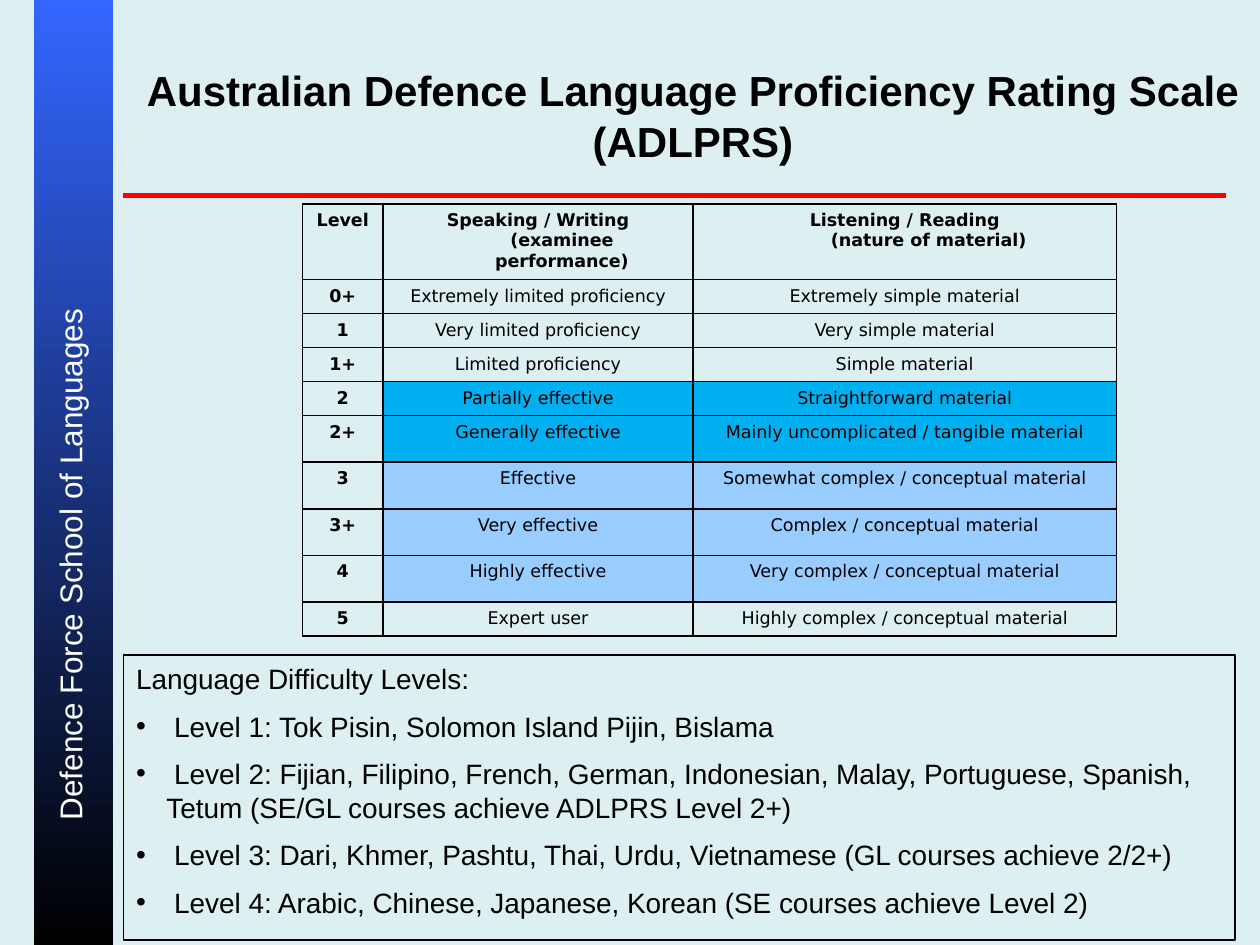
from copy import deepcopy
from dataclasses import dataclass

from lxml import etree
from pptx import Presentation
from pptx import util as u
from pptx.dml.color import RGBColor
from pptx.enum import shapes, text
from pptx.oxml.ns import qn

COLS, ROWS = 100, 75
BLACK, SKY, PALE = "000000", "00B0F0", "99CCFF"
CENTER, LEFT = text.PP_ALIGN.CENTER, text.PP_ALIGN.LEFT

prs = Presentation()
prs.slide_width, prs.slide_height = u.Inches(10), u.Inches(7.5)


def col(n: float) -> int:
    return round(prs.slide_width * n / COLS)


def row(n: float) -> int:
    return round(prs.slide_height * n / ROWS)


def rgb(value: str) -> RGBColor:
    return RGBColor.from_string(value)


@dataclass
class Box:
    x: float
    y: float
    w: float
    h: float

    def emu(self) -> tuple:
        return col(self.x), row(self.y), col(self.w), row(self.h)


@dataclass
class Level:
    name: str
    speaking: str
    listening: str
    height: float = 2.7
    fill: str = ""


@dataclass
class Style:
    size: float
    font: str = "Arial"
    color: str = BLACK
    bold: bool = False
    align: int = CENTER
    margin: float = 0
    hang: float = 0
    bullet: str = ""
    before: float = 0


def place(sp, box: Box) -> None:
    for name, value in zip(("left", "top", "width", "height"), box.emu()):
        setattr(sp, name, value)


def write(p, words: str, st: Style) -> None:
    p.text = words
    ppr = p._p.get_or_add_pPr()
    ppr.set("marL", str(col(st.margin)))
    ppr.set("indent", str(-col(st.hang)))
    if st.bullet:
        etree.SubElement(ppr, qn("a:buChar")).set("char", st.bullet)
    else:
        etree.SubElement(ppr, qn("a:buNone"))
    for name, value in {"alignment": st.align, "space_before": u.Pt(st.before)}.items():
        setattr(p, name, value)
    for r in p.runs:
        values = {"size": u.Pt(st.size), "name": st.font, "bold": st.bold}
        for name, value in values.items():
            setattr(r.font, name, value)
        r.font.color.rgb = rgb(st.color)
    for br in p._p.findall(qn("a:br")):
        br.append(deepcopy(p.runs[0]._r.rPr))


def set_frame(tf, anchor) -> None:
    values = {"word_wrap": True, "auto_size": text.MSO_AUTO_SIZE.NONE,
              "vertical_anchor": anchor}
    for name, value in values.items():
        setattr(tf, name, value)


def border(cell, color: str, width: float) -> None:
    tcpr = cell._tc.get_or_add_tcPr()
    for i, side in enumerate(("lnL", "lnR", "lnT", "lnB")):
        ln = etree.Element(qn(f"a:{side}"), w=str(u.Pt(width)))
        fill = etree.SubElement(ln, qn("a:solidFill"))
        etree.SubElement(fill, qn("a:srgbClr")).set("val", color)
        tcpr.insert(i, ln)


def draw_band(s, box: Box) -> None:
    sp = s.shapes.add_shape(shapes.MSO_SHAPE.RECTANGLE, *box.emu())
    sp.shadow.inherit = False
    sp.line.fill.background()
    sp.fill.gradient()
    sp.fill.gradient_angle = 270
    for stop, color in zip(sp.fill.gradient_stops, ("3366FF", BLACK)):
        stop.color.rgb = rgb(color)


def draw_rule(s, x1: float, x2: float, y: float) -> None:
    cn = s.shapes.add_connector(shapes.MSO_CONNECTOR.STRAIGHT,
                                col(x1), row(y), col(x2), row(y))
    cn.line.color.rgb = rgb("FF0000")
    cn.line.width = u.Pt(3)
    etree.SubElement(cn._element.spPr, qn("a:effectLst"))


def draw_side_label(s, words: str, box: Box) -> None:
    sp = s.shapes.add_textbox(*box.emu())
    sp.rotation = 270
    set_frame(sp.text_frame, text.MSO_ANCHOR.TOP)
    write(sp.text_frame.paragraphs[0], words, Style(18, color="FFFFFF"))


def draw_table(s, levels: list, widths: tuple, x: float, y: float) -> None:
    box = Box(x, y, sum(widths), sum(lv.height for lv in levels))
    tbl = s.shapes.add_table(len(levels), len(widths), *box.emu()).table
    tbl.first_row = tbl.horz_banding = False
    for column, width in zip(tbl.columns, widths):
        column.width = col(width)
    for i, lv in enumerate(levels):
        tbl.rows[i].height = row(lv.height)
        for j, words in enumerate((lv.name, lv.speaking, lv.listening)):
            cell = tbl.cell(i, j)
            if lv.fill and j:
                cell.fill.solid()
                cell.fill.fore_color.rgb = rgb(lv.fill)
            else:
                cell.fill.background()
            border(cell, BLACK, 1)
            write(cell.text_frame.paragraphs[0], words,
                  Style(10, "DejaVu Sans", bold=i == 0 or j == 0, margin=3.8, hang=3.8))


def draw_list(sp, heading: str, items: list, box: Box) -> None:
    place(sp, box)
    sp.line.color.rgb = rgb(BLACK)
    sp.line.width = u.Pt(1)
    tf = sp.text_frame
    set_frame(tf, text.MSO_ANCHOR.TOP)
    write(tf.paragraphs[0], heading, Style(16, align=LEFT))
    for item in items:
        write(tf.add_paragraph(), " " + item,
              Style(16, align=LEFT, margin=2.4, hang=2.4, bullet="•", before=8))


LEVELS = [
    Level("Level", "Speaking / Writing\v(examinee performance)",
          "Listening / Reading\v(nature of material)", 6),
    Level("0+", "Extremely limited proficiency", "Extremely simple material"),
    Level("1", "Very limited proficiency", "Very simple material"),
    Level("1+", "Limited proficiency", "Simple material"),
    Level("2", "Partially effective", "Straightforward material", fill=SKY),
    Level("2+", "Generally effective", "Mainly uncomplicated / tangible material", 3.7, SKY),
    Level("3", "Effective", "Somewhat complex / conceptual material", 3.7, PALE),
    Level("3+", "Very effective", "Complex / conceptual material", 3.7, PALE),
    Level("4", "Highly effective", "Very complex / conceptual material", 3.7, PALE),
    Level("5", "Expert user", "Highly complex / conceptual material"),
]
DIFFICULTY = [
    "Level 1: Tok Pisin, Solomon Island Pijin, Bislama",
    "Level 2: Fijian, Filipino, French, German, Indonesian, Malay, Portuguese, Spanish, "
    "Tetum (SE/GL courses achieve ADLPRS Level 2+)",
    "Level 3: Dari, Khmer, Pashtu, Thai, Urdu, Vietnamese (GL courses achieve 2/2+)",
    "Level 4: Arabic, Chinese, Japanese, Korean (SE courses achieve Level 2)",
]


def main() -> None:
    s = prs.slides.add_slide(prs.slide_layouts[1])
    s.background.fill.solid()
    s.background.fill.fore_color.rgb = rgb("DDEFF1")
    draw_band(s, Box(2.7, 0, 6.3, ROWS))
    draw_rule(s, 9.8, 97.3, 15.5)
    draw_side_label(s, "Defence Force School of Languages", Box(-24.6, 42.8, 60.3, 4))
    title, body = s.placeholders
    place(title, Box(10, 2.9, 90, 12.5))
    set_frame(title.text_frame, text.MSO_ANCHOR.MIDDLE)
    write(title.text_frame.paragraphs[0],
          "Australian Defence Language Proficiency Rating Scale\v(ADLPRS)",
          Style(24, bold=True))
    draw_table(s, LEVELS, (6.4, 24.6, 33.6), 24, 16.2)
    draw_list(body, "Language Difficulty Levels:", DIFFICULTY, Box(9.8, 52, 88.2, 22.6))
    prs.save("out.pptx")


if __name__ == "__main__":
    main()
